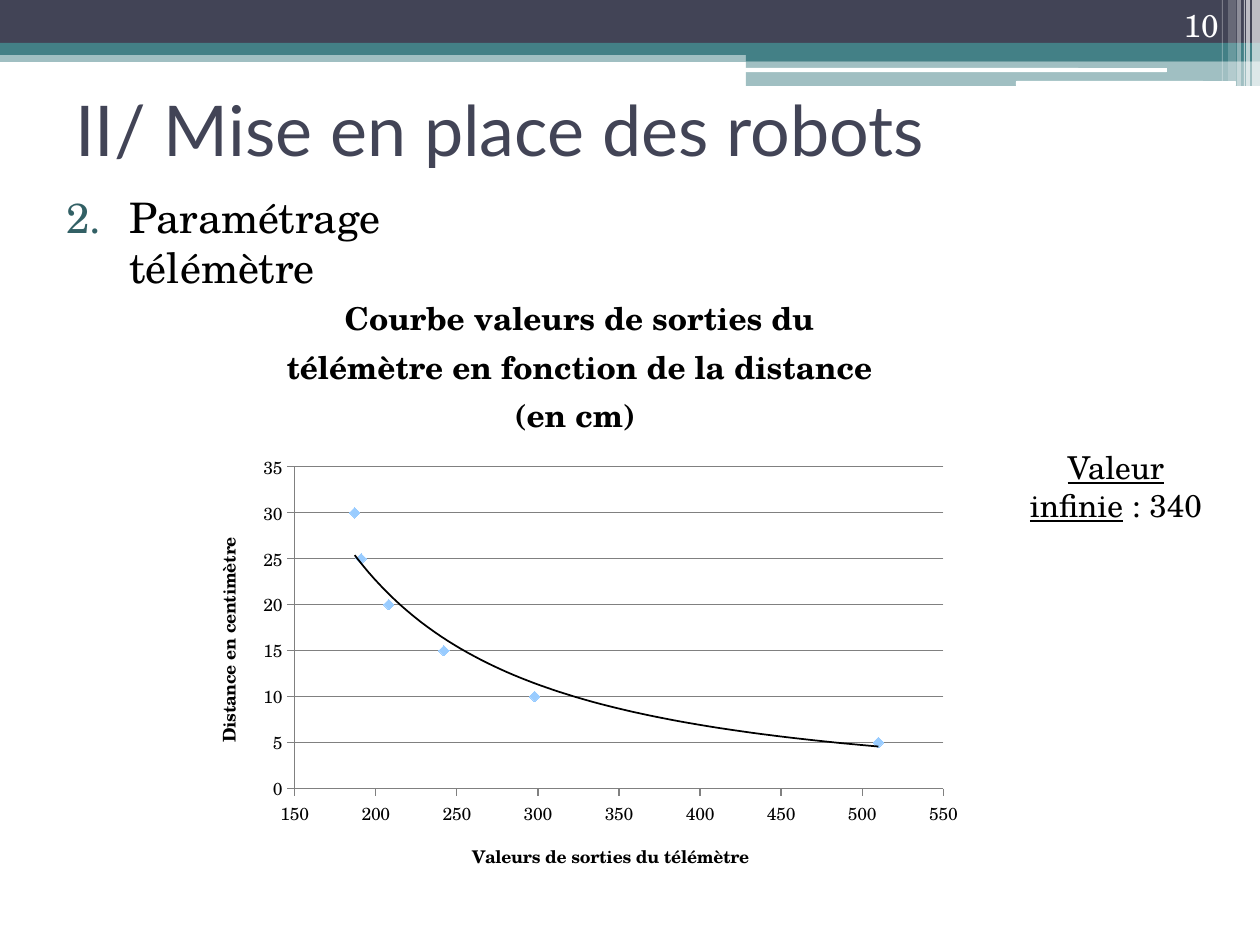
from lxml import etree
from pptx import Presentation, chart as charts, util as u
from pptx.chart import data as chart_data
from pptx.dml import color
from pptx.enum import chart as ch, shapes, text
from pptx.oxml import ns, parse_xml

SCALE = 914400 / 126
THEME = dict(
    dark="424456", teal="438086", white="FFFFFF", black="000000", number="326065",
    point="99CCFF", grid="808080", heading_font="Lato", body_font="TeX Gyre Schola",
    heading=40, body=24, note=18, chart=10,
)


def px(*lengths):
    return [u.Emu(round(length * SCALE)) for length in lengths]


def style(font, **values):
    defaults = dict(name=THEME["body_font"], size=THEME["note"], bold=False)
    values = {**defaults, **values}
    font.color.rgb = color.RGBColor.from_string(THEME[values.pop("tint", "black")])
    values["size"] = u.Pt(values["size"])
    for key, value in values.items():
        setattr(font, key, value)


deck = Presentation()
deck.slide_width, deck.slide_height = px(1260, 945)
slide = deck.slides.add_slide(deck.slide_layouts[6])

bands = [
    ("rect", 0, 50, 1260, 12, "teal", 50),
    ("rect", 0, 0, 1260, 43, "dark", 100),
    ("rect", 0, 43, 1260, 12, "teal", 100),
    ("rect", 746, 49, 514, 12, "teal", 100),
    ("rect", 746, 61, 514, 25, "teal", 50),
    ("round", 745, 68, 422, 4, "white", 100),
    ("round", 1016, 81, 220, 5, "white", 100),
]
stripes = [
    (1252, 8, 86, 65), (1246, 4, 86, 65), (1244, 1, 86, 60),
    (1237, 4, 86, 40), (1228, 8, 81, 20), (1222, 1, 81, 30),
]
bands += [("rect", x, 0, w, h, "white", alpha) for x, w, h, alpha in stripes]
presets = {"rect": shapes.MSO_SHAPE.RECTANGLE, "round": shapes.MSO_SHAPE.ROUNDED_RECTANGLE}

for preset, x, y, w, h, tint, alpha in bands:
    band = slide.shapes.add_shape(presets[preset], *px(x, y, w, h))
    band.shadow.inherit = False
    band.line.fill.background()
    band.fill.solid()
    band.fill.fore_color.rgb = color.RGBColor.from_string(THEME[tint])
    if alpha < 100:
        swatch = band.fill._xPr.find(".//" + ns.qn("a:srgbClr"))
        etree.SubElement(swatch, ns.qn("a:alpha"), val=str(alpha * 1000))

left, center, right = text.PP_ALIGN.LEFT, text.PP_ALIGN.CENTER, text.PP_ALIGN.RIGHT
top, middle, bottom = text.MSO_ANCHOR.TOP, text.MSO_ANCHOR.MIDDLE, text.MSO_ANCHOR.BOTTOM
heading = dict(name=THEME["heading_font"], size=THEME["heading"], tint="dark")
texts = [
    ((63, 55, 1134, 147), left, middle, [("II/ Mise en place des robots", heading)]),
    ((997, 442, 238, 89), center, top,
     [("Valeur infinie", dict(underline=True)), (" : 340", dict(underline=False))]),
    ((54, 185, 517, 63), left, top, [("Paramétrage télémètre", dict(size=THEME["body"]))]),
    ((1126, 0, 105, 50), right, bottom, [("10", dict(tint="white"))]),
]
paragraphs = []
for box, align, anchor, runs in texts:
    frame = slide.shapes.add_textbox(*px(*box)).text_frame
    for key, value in dict(word_wrap=True, vertical_anchor=anchor).items():
        setattr(frame, key, value)
    paragraph = frame.paragraphs[0]
    paragraph.alignment = align
    for words, look in runs:
        run = paragraph.add_run()
        run.text = words
        style(run.font, **look)
    paragraphs.append(paragraph)

numbered = paragraphs[2]._p.get_or_add_pPr()
indent = px(63)[0]
numbered.set("marL", str(indent))
numbered.set("indent", str(-indent))
bullet_color = etree.SubElement(numbered, ns.qn("a:buClr"))
etree.SubElement(bullet_color, ns.qn("a:srgbClr"), val=THEME["number"])
etree.SubElement(numbered, ns.qn("a:buFont"), typeface=THEME["body_font"])
etree.SubElement(numbered, ns.qn("a:buAutoNum"), type="arabicPeriod", startAt="2")

readings = chart_data.XyChartData()
curve = readings.add_series("Series 1")
for output, distance in [(510, 5), (298, 10), (242, 15), (208, 20), (191, 25), (187, 30)]:
    curve.add_data_point(output, distance)
chart_box = (184, 265, 791, 631)
chart = slide.shapes.add_chart(ch.XL_CHART_TYPE.XY_SCATTER, *px(*chart_box), readings).chart
chart.has_legend = False
style(chart.font, size=THEME["chart"])

axes = [
    (chart.category_axis, "Valeurs de sorties du télémètre", 150, 550, 50, False),
    (chart.value_axis, "Distance en centimètre", 0, 35, 5, True),
]
titles = [(chart, "Courbe valeurs de sorties du télémètre en fonction de la distance (en cm) ",
           THEME["note"])]
for axis, label, low, high, step, grid in axes:
    settings = dict(
        minimum_scale=low, maximum_scale=high, major_unit=step, has_major_gridlines=grid,
        major_tick_mark=ch.XL_TICK_MARK.OUTSIDE, minor_tick_mark=ch.XL_TICK_MARK.NONE,
    )
    for key, value in settings.items():
        setattr(axis, key, value)
    style(axis.tick_labels.font, size=THEME["chart"])
    axis.tick_labels.number_format = "General"
    axis.tick_labels.number_format_is_linked = False
    lines = [axis.format.line] + ([axis.major_gridlines.format.line] if grid else [])
    for line in lines:
        line.color.rgb = color.RGBColor.from_string(THEME["grid"])
        line.width = u.Pt(0.75)
    titles.append((axis, label, THEME["chart"]))

for owner, label, size in titles:
    title = owner.chart_title if owner is chart else owner.axis_title
    run = title.text_frame.paragraphs[0].add_run()
    run.text = label
    style(run.font, size=size, bold=True)

plot = chart.plots[0]
plot.vary_by_categories = False
series = plot.series[0]
series.smooth = False
series.format.line.fill.background()
series.marker.style = ch.XL_MARKER_STYLE.DIAMOND
series.marker.size = 6
series.marker.format.fill.solid()
series.marker.format.fill.fore_color.rgb = color.RGBColor.from_string(THEME["point"])
series.marker.format.line.fill.background()

trend = parse_xml(
    f'<c:trendline {ns.nsdecls("c", "a")}><c:spPr><a:ln w="12700"><a:solidFill>'
    f'<a:srgbClr val="{THEME["black"]}"/></a:solidFill></a:ln></c:spPr>'
    '<c:trendlineType val="power"/><c:dispRSqr val="0"/><c:dispEq val="0"/></c:trendline>'
)
series._element.find(ns.qn("c:xVal")).addprevious(trend)

plot_area = chart._chartSpace.chart.plotArea
for old_layout in plot_area.findall(ns.qn("c:layout")):
    plot_area.remove(old_layout)
layout = etree.Element(ns.qn("c:layout"))
manual = etree.SubElement(layout, ns.qn("c:manualLayout"))
placement = dict(
    layoutTarget="inner", xMode="edge", yMode="edge", x=0.14, y=0.32, w=0.82, h=0.51,
)
for key, value in placement.items():
    etree.SubElement(manual, ns.qn("c:" + key), val=str(value))
plot_area.insert(0, layout)

deck.save("out.pptx")
